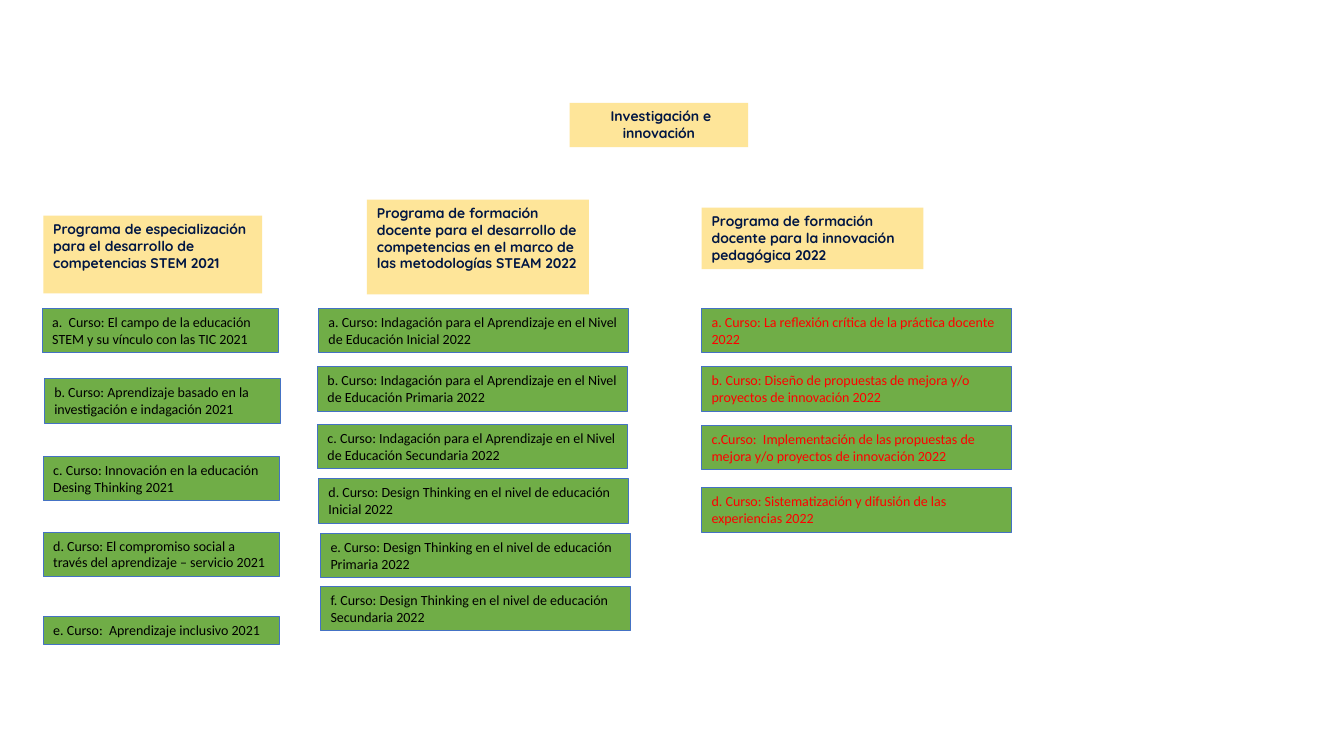
from pptx import Presentation
from pptx.dml.color import RGBColor
from pptx.enum.shapes import MSO_SHAPE as Shape
from pptx.enum.text import MSO_ANCHOR as Anchor, MSO_AUTO_SIZE as AutoSize, PP_ALIGN as Align
from pptx.util import Inches, Pt

CREAM = RGBColor(0xFE, 0xE5, 0x99)
NAVY = RGBColor(0x01, 0x16, 0x43)
GREEN = RGBColor(0x70, 0xAD, 0x47)
BLUE = RGBColor(0x44, 0x72, 0xC4)
BLACK = RGBColor(0, 0, 0)
RED = RGBColor(0xFF, 0, 0)

COURSE_HEIGHT = 0.44

# Each program: heading, heading box, course width, course colour, courses (left, top, text)
PROGRAMS = [
    ("Programa de especialización para el desarrollo de competencias STEM 2021",
     (0.43, 2.14, 2.17, 0.77), 2.34, BLACK, [
         (0.42, 3.06, "a.  Curso: El campo de la educación STEM y su vínculo con las TIC 2021"),
         (0.44, 3.76, "b. Curso: Aprendizaje basado en la investigación e indagación 2021"),
         (0.43, 4.53, "c. Curso: Innovación en la educación Desing Thinking 2021"),
         (0.43, 5.28, "d. Curso: El compromiso social a través del aprendizaje – servicio 2021"),
         (0.43, 6.12, "e. Curso:  Aprendizaje inclusivo 2021"),
     ]),
    ("Programa de formación docente para el desarrollo de competencias en el marco de "
     "las metodologías STEAM 2022",
     (3.64, 1.98, 2.2, 0.94), 3.07, BLACK, [
         (3.16, 3.06, "a. Curso: Indagación para el Aprendizaje en el Nivel de Educación Inicial 2022"),
         (3.15, 3.64, "b. Curso: Indagación para el Aprendizaje en el Nivel de Educación Primaria 2022"),
         (3.15, 4.21, "c. Curso: Indagación para el Aprendizaje en el Nivel de Educación Secundaria 2022"),
         (3.16, 4.75, "d. Curso: Design Thinking en el nivel de educación Inicial 2022"),
         (3.18, 5.29, "e. Curso: Design Thinking en el nivel de educación Primaria 2022"),
         (3.18, 5.82, "f. Curso: Design Thinking en el nivel de educación Secundaria 2022"),
     ]),
    ("Programa de formación docente para la innovación pedagógica 2022",
     (6.96, 2.06, 2.2, 0.61), 3.07, RED, [
         (6.96, 3.06, "a. Curso: La reflexión crítica de la práctica docente 2022"),
         (6.96, 3.64, "b. Curso: Diseño de propuestas de mejora y/o proyectos de innovación 2022"),
         (6.96, 4.22, "c.Curso:  Implementación de las propuestas de mejora y/o proyectos de innovación 2022"),
         (6.96, 4.84, "d. Curso: Sistematización y difusión de las experiencias 2022"),
     ]),
]


def write_text(box, text, font_name, color, bold=False, align=Align.LEFT):
    frame = box.text_frame
    frame.word_wrap = True
    frame.auto_size = AutoSize.NONE
    frame.vertical_anchor = Anchor.TOP
    para = frame.paragraphs[0]
    para.text = text
    para.alignment = align
    para.font.name = font_name
    para.font.size = Pt(10)
    para.font.bold = bold
    para.font.color.rgb = color


def fill_box(box, color):
    box.fill.solid()
    box.fill.fore_color.rgb = color


def add_box(page, bounds, color):
    box = page.shapes.add_shape(Shape.RECTANGLE, *map(Inches, bounds))
    box.shadow.inherit = False
    fill_box(box, color)
    return box


def place_title(page, text, bounds):
    title = page.shapes.title
    title.left, title.top, title.width, title.height = map(Inches, bounds)
    fill_box(title, CREAM)
    write_text(title, text, "Quicksand", NAVY, bold=True, align=Align.CENTER)


def add_heading(page, text, bounds):
    box = add_box(page, bounds, CREAM)
    box.line.fill.background()
    write_text(box, text, "Quicksand", NAVY, bold=True)


def add_course(page, text, bounds, color):
    box = add_box(page, bounds, GREEN)
    box.line.color.rgb = BLUE
    box.line.width = Pt(0.75)
    write_text(box, text, "Calibri", color)


def main():
    deck = Presentation()
    deck.slide_width, deck.slide_height = Inches(13.33), Inches(7.5)
    page = deck.slides.add_slide(deck.slide_layouts[5])
    place_title(page, " Investigación e innovación", (5.65, 1.02, 1.77, 0.44))
    for heading, bounds, width, color, courses in PROGRAMS:
        add_heading(page, heading, bounds)
        for left, top, text in courses:
            # The inclusive learning course fits on a single line
            height = 0.27 if "inclusivo" in text else COURSE_HEIGHT
            add_course(page, text, (left, top, width, height), color)
    deck.save("out.pptx")


if __name__ == "__main__":
    main()
